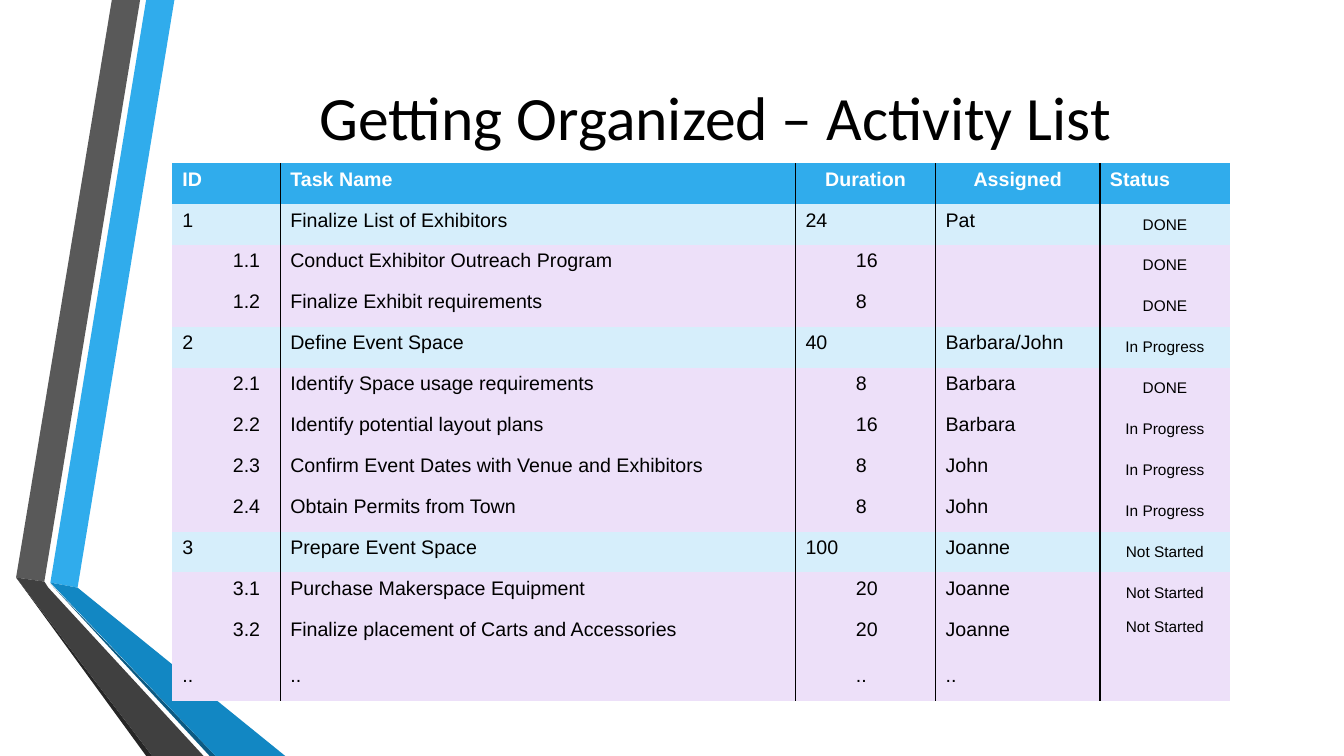
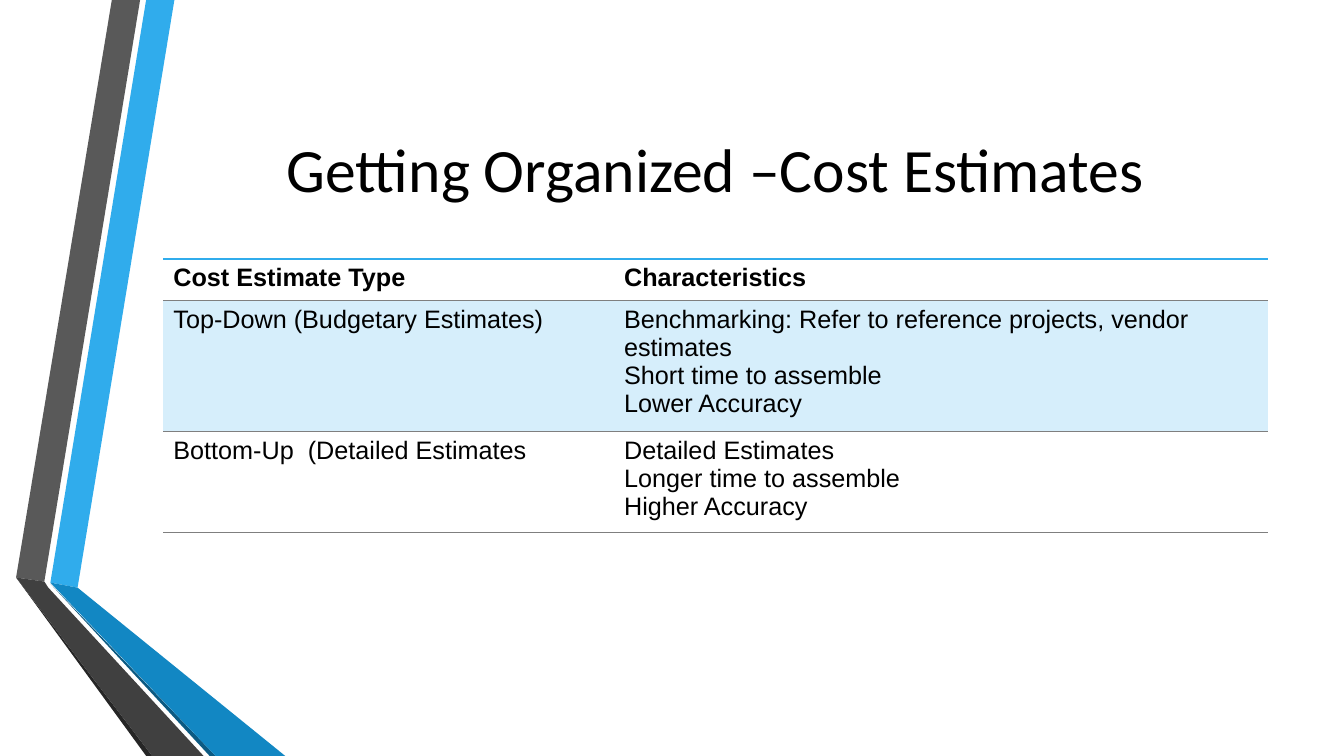
"""Build two planning slides: an activity list and a cost estimate table."""
from lxml import etree
from pptx import Presentation
from pptx.dml.color import RGBColor
from pptx.enum.text import MSO_ANCHOR, PP_ALIGN
from pptx.oxml.ns import qn
from pptx.util import Inches, Pt

CENTER = PP_ALIGN.CENTER
LEFT = PP_ALIGN.LEFT
TOP = MSO_ANCHOR.TOP
MIDDLE = MSO_ANCHOR.MIDDLE
PLAIN_TABLE = "{2D5ABB26-0587-4C30-8999-92F81FD0307C}"

COLORS = {
    "blue": "30ACEC", "blue_fold": "1287C3", "blue_edge": "0C5A82",
    "gray": "595959", "gray_fold": "404040", "gray_edge": "262626",
    "group": "D6EEFB", "task": "EDE0F9", "rule": "7F7F7F",
    "black": "000000", "white": "FFFFFF",
}

RIBBONS = [
    ("blue", [(0.5, 5.78), (0.77, 5.83), (1.73, 0), (1.45, 0)]),
    ("gray", [(1.39, 0), (1.11, 0), (0.16, 5.73), (0.44, 5.77)]),
    ("gray_edge", [(0.16, 5.73), (1.45, 7.5), (1.51, 7.5)]),
    ("blue_edge", [(0.5, 5.79), (2.08, 7.5), (2.14, 7.5)]),
    ("blue_fold", [(0.5, 5.78), (2.14, 7.5), (2.83, 7.5), (0.77, 5.83)]),
    ("gray_fold", [(2.02, 7.5), (0.48, 5.83), (0.44, 5.77), (0.16, 5.73), (1.51, 7.5)]),
]

ACTIVITY_HEADER = ["ID", "Task Name", "Duration", "Assigned", "Status"]
ACTIVITIES = [
    ["1", "Finalize List of Exhibitors", "24", "Pat", "DONE"],
    ["1.1", "Conduct Exhibitor Outreach Program", "16", "", "DONE"],
    ["1.2", "Finalize Exhibit requirements", "8", "", "DONE"],
    ["2", "Define Event Space", "40", "Barbara/John", "In Progress"],
    ["2.1", "Identify Space usage requirements", "8", "Barbara", "DONE"],
    ["2.2", "Identify potential layout plans", "16", "Barbara", "In Progress"],
    ["2.3", "Confirm Event Dates with Venue and Exhibitors", "8", "John", "In Progress"],
    ["2.4", "Obtain Permits from Town", "8", "John", "In Progress"],
    ["3", "Prepare Event Space", "100", "Joanne", "Not Started"],
    ["3.1", "Purchase Makerspace Equipment", "20", "Joanne", "Not Started"],
    ["3.2", "Finalize placement of Carts and Accessories", "20", "Joanne", "Not Started"],
    ["..", "..", "..", "..", ""],
]
ESTIMATES = [
    ["Cost Estimate Type", "Characteristics"],
    ["Top-Down (Budgetary Estimates)",
     "Benchmarking: Refer to reference projects, vendor estimates\n"
     "Short time to assemble\nLower Accuracy"],
    ["Bottom-Up  (Detailed Estimates",
     "Detailed Estimates\nLonger time to assemble\nHigher Accuracy"],
]


class SlideBuilder:
    """Hold the deck, its style and the current slide."""

    def __init__(self):
        self.deck = Presentation()
        self.deck.slide_width = Inches(13.33)
        self.deck.slide_height = Inches(7.5)
        self.slide = None

    def color(self, name):
        """Return a named colour."""
        return RGBColor.from_string(COLORS[name])

    def add_slide(self, title, title_height):
        """Start a slide with the ribbons and a title."""
        self.slide = self.deck.slides.add_slide(self.deck.slide_layouts[6])
        group = self.slide.shapes.add_group_shape()
        for name, points in RIBBONS:
            self.add_ribbon(group.shapes, name, points)
        self.add_title(title, title_height)

    def add_ribbon(self, shapes, name, points):
        """Draw one filled outline."""
        corners = [(Inches(x), Inches(y)) for x, y in points]
        builder = shapes.build_freeform(*corners[0], scale=1.0)
        builder.add_line_segments(corners[1:], close=True)
        ribbon = builder.convert_to_shape()
        ribbon.shadow.inherit = False
        ribbon.fill.solid()
        ribbon.fill.fore_color.rgb = self.color(name)
        ribbon.line.fill.background()

    def add_title(self, text, height):
        """Add the centred title."""
        box = self.slide.shapes.add_textbox(
            Inches(1.62), Inches(0.75), Inches(10.96), Inches(height))
        frame = box.text_frame
        frame.word_wrap = True
        frame.vertical_anchor = MIDDLE
        frame.text = text
        para = frame.paragraphs[0]
        para.alignment = CENTER
        para.line_spacing = 0.9
        self.format_runs(para, 44, "black", "Calibri")

    def format_runs(self, para, size, color, font="Arial", bold=False):
        """Set the font of every run in a paragraph."""
        for span in para.runs:
            span.font.name = font
            span.font.size = Pt(size)
            span.font.bold = bold
            span.font.color.rgb = self.color(color)

    def add_table(self, left, top, widths, heights):
        """Add an unstyled table with the given column and row sizes."""
        frame = self.slide.shapes.add_table(
            len(heights), len(widths), Inches(left), Inches(top),
            Inches(sum(widths)), Inches(sum(heights)))
        table = frame.table
        table.horz_banding = False
        table._tbl.tblPr.find(qn("a:tableStyleId")).text = PLAIN_TABLE
        for column, width in zip(table.columns, widths):
            column.width = Inches(width)
        for row, height in zip(table.rows, heights):
            row.height = Inches(height)
        return table

    def fill_cell(self, cell, text, size, color="black", bold=False, fill=None,
                  align=LEFT, anchor=TOP, indented=False, borders=()):
        """Write and style one cell; borders come in the order L, R, T, B."""
        cell.text_frame.text = text
        cell.vertical_anchor = anchor
        for para in cell.text_frame.paragraphs:
            para.alignment = align
            if indented:
                para.level = 1
                para._p.get_or_add_pPr().set("marL", str(Inches(0.5)))
            self.format_runs(para, size, color, bold=bold)
        for side, name in borders:
            self.add_border(cell, side, name)
        if fill:
            cell.fill.solid()
            cell.fill.fore_color.rgb = self.color(fill)
        else:
            cell.fill.background()

    def add_border(self, cell, side, name):
        """Draw a one-point line along one side of a cell."""
        properties = cell._tc.get_or_add_tcPr()
        line = etree.SubElement(properties, qn(f"a:ln{side}"), w=str(Pt(1)))
        solid = etree.SubElement(line, qn("a:solidFill"))
        etree.SubElement(solid, qn("a:srgbClr"), val=COLORS[name])

    def add_activity_table(self):
        """Add the task list with its groups and indented subtasks."""
        heights = [0.406] * 11 + [0.46, 0.406]
        table = self.add_table(1.71, 1.62, [1.07, 5.11, 1.39, 1.63, 1.29], heights)
        last = len(ACTIVITY_HEADER) - 1
        for r, values in enumerate([ACTIVITY_HEADER] + ACTIVITIES):
            is_group = values[0].isdigit()
            for c, text in enumerate(values):
                borders = [("L", "black")] if c > 0 else []
                borders += [("R", "black")] if c < last else []
                style = {"size": 14, "borders": borders}
                if r == 0:
                    style.update(color="white", bold=True, fill="blue",
                                 align=CENTER if c in (2, 3) else LEFT)
                else:
                    style["fill"] = "group" if is_group else "task"
                    style["indented"] = not is_group and (
                        c == 2 or (c == 0 and text != ".."))
                    if c == last:
                        style.update(size=11, align=CENTER,
                                     anchor=TOP if r == 11 else MIDDLE)
                self.fill_cell(table.cell(r, c), text, **style)

    def add_estimate_table(self):
        """Add the comparison of estimate types."""
        table = self.add_table(1.62, 2.57, [4.47, 6.49], [0.41, 1.22, 0.94])
        fills = [None, "group", None]
        borders = [[("T", "blue"), ("B", "rule")], [("T", "rule")], [("B", "rule")]]
        for r, values in enumerate(ESTIMATES):
            for c, text in enumerate(values):
                self.fill_cell(table.cell(r, c), text, 18, bold=r == 0,
                               fill=fills[r], borders=borders[r])


def main():
    """Build and save the deck."""
    builder = SlideBuilder()
    builder.add_slide("Getting Organized – Activity List", 0.89)
    builder.add_activity_table()
    builder.add_slide("Getting Organized –Cost Estimates", 1.92)
    builder.add_estimate_table()
    builder.deck.save("out.pptx")


if __name__ == "__main__":
    main()
